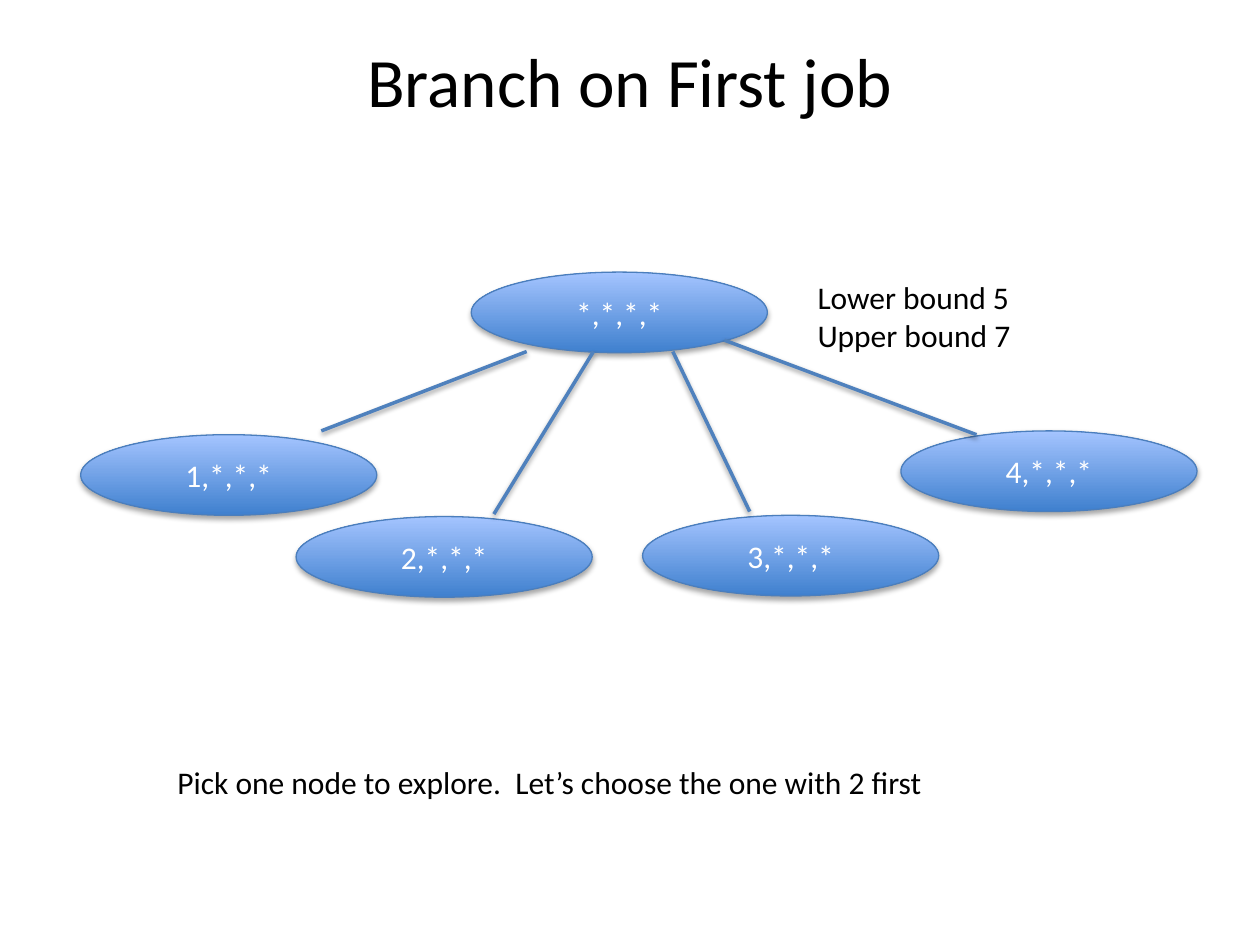
import lxml.etree
import pptx
import pptx.dml.color
import pptx.enum.shapes
import pptx.enum.text
import pptx.oxml.ns
import pptx.util

BLACK = pptx.dml.color.RGBColor(0x00, 0x00, 0x00)
WHITE = pptx.dml.color.RGBColor(0xFF, 0xFF, 0xFF)
NODE_BOTTOM = pptx.dml.color.RGBColor(0x3F, 0x80, 0xCE)
NODE_TOP = pptx.dml.color.RGBColor(0xA4, 0xC4, 0xFF)
NODE_LINE = pptx.dml.color.RGBColor(0x4B, 0x7E, 0xBC)
EDGE_LINE = pptx.dml.color.RGBColor(0x4F, 0x81, 0xBD)

CELL = pptx.util.Inches(0.1)
COLUMNS, ROWS = 100, 75
NODE_SIZE = (23.5, 6.4)

ALIGN = pptx.enum.text.PP_ALIGN
ANCHOR = pptx.enum.text.MSO_ANCHOR
TITLE_FONT = {"name": "Calibri", "size": pptx.util.Pt(39.6)}
BODY_FONT = {"name": "Calibri", "size": pptx.util.Pt(18)}
TITLE_FRAME = {"word_wrap": True, "vertical_anchor": ANCHOR.TOP, "margin_top": 0}
NODE_FRAME = {"word_wrap": True, "vertical_anchor": ANCHOR.MIDDLE}
NOTE_FRAME = {
    "word_wrap": False,
    "auto_size": pptx.enum.text.MSO_AUTO_SIZE.SHAPE_TO_FIT_TEXT,
}

NODES = [
    ("*,*,*,*", 31, 0),
    ("3,*,*,*", 44.6, 19.3),
    ("4,*,*,*", 65.1, 12.6),
    ("2,*,*,*", 17.1, 19.4),
    ("1,*,*,*", 0, 12.9),
]
EDGES = [
    (35.4, 6.3, 19.1, 12.6),
    (40.7, 6.3, 32.8, 19.2),
    (47, 6.3, 53.1, 19),
    (51.1, 5.4, 71.1, 12.9),
]


def cells(*counts):
    return [round(count * CELL) for count in counts]


def apply_format(target, values):
    for name, value in values.items():
        setattr(target, name, value)


def write_lines(frame, lines, frame_format, font_format, color, align):
    apply_format(frame, frame_format)
    for index, line in enumerate(lines):
        para = frame.paragraphs[0] if index == 0 else frame.add_paragraph()
        para.alignment = align
        span = para.add_run()
        span.text = line
        apply_format(span.font, font_format)
        span.font.color.rgb = color


def add_shadow(item, distance, opacity):
    qn = pptx.oxml.ns.qn
    effects = lxml.etree.SubElement(item._element.spPr, qn("a:effectLst"))
    shadow = lxml.etree.SubElement(
        effects,
        qn("a:outerShdw"),
        blurRad=str(pptx.util.Pt(3.1)),
        dist=str(pptx.util.Pt(distance)),
        dir="5400000",
        rotWithShape="0",
    )
    color = lxml.etree.SubElement(shadow, qn("a:srgbClr"), val=str(BLACK))
    lxml.etree.SubElement(color, qn("a:alpha"), val=str(opacity * 1000))


def add_title(page, box, title):
    frame = page.shapes.add_textbox(*cells(*box)).text_frame
    write_lines(frame, [title], TITLE_FRAME, TITLE_FONT, BLACK, ALIGN.CENTER)


def add_note(page, box, lines):
    frame = page.shapes.add_textbox(*cells(*box)).text_frame
    write_lines(frame, lines, NOTE_FRAME, BODY_FONT, BLACK, ALIGN.LEFT)


def add_node(page, box, label):
    node = page.shapes.add_shape(
        pptx.enum.shapes.MSO_SHAPE.OVAL, *cells(*box)
    )
    node.fill.gradient()
    node.fill.gradient_angle = 90
    for stop, color, position in zip(
        node.fill.gradient_stops, (NODE_BOTTOM, NODE_TOP), (0, 1)
    ):
        stop.color.rgb = color
        stop.position = position
    node.line.color.rgb = NODE_LINE
    node.line.width = pptx.util.Pt(0.75)
    add_shadow(node, 1.8, 35)
    write_lines(
        node.text_frame, [label], NODE_FRAME, BODY_FONT, WHITE, ALIGN.CENTER
    )


def add_edge(page, ends):
    edge = page.shapes.add_connector(
        pptx.enum.shapes.MSO_CONNECTOR.STRAIGHT, *cells(*ends)
    )
    edge.line.color.rgb = EDGE_LINE
    edge.line.width = pptx.util.Pt(2)
    add_shadow(edge, 1.6, 38)


def add_tree(page, box):
    left, top = box[:2]
    for label, column, row in NODES:
        add_node(page, (left + column, top + row, *NODE_SIZE), label)
    for x1, y1, x2, y2 in EDGES:
        add_edge(page, (left + x1, top + y1, left + x2, top + y2))


def main():
    deck = pptx.Presentation()
    deck.slide_width, deck.slide_height = cells(COLUMNS, ROWS)
    page = deck.slides.add_slide(deck.slide_layouts[6])
    add_title(page, (5, 3, 90, 12.5), "Branch on First job")
    add_tree(page, (6.4, 21.6, 88.6, 25.8))
    add_note(page, (63.9, 21.6, 17.4, 7.1), ["Lower bound 5", "Upper bound 7"])
    add_note(
        page,
        (13.1, 60.1, 62, 4),
        ["Pick one node to explore.  Let’s choose the one with 2 first"],
    )
    deck.save("out.pptx")


if __name__ == "__main__":
    main()
